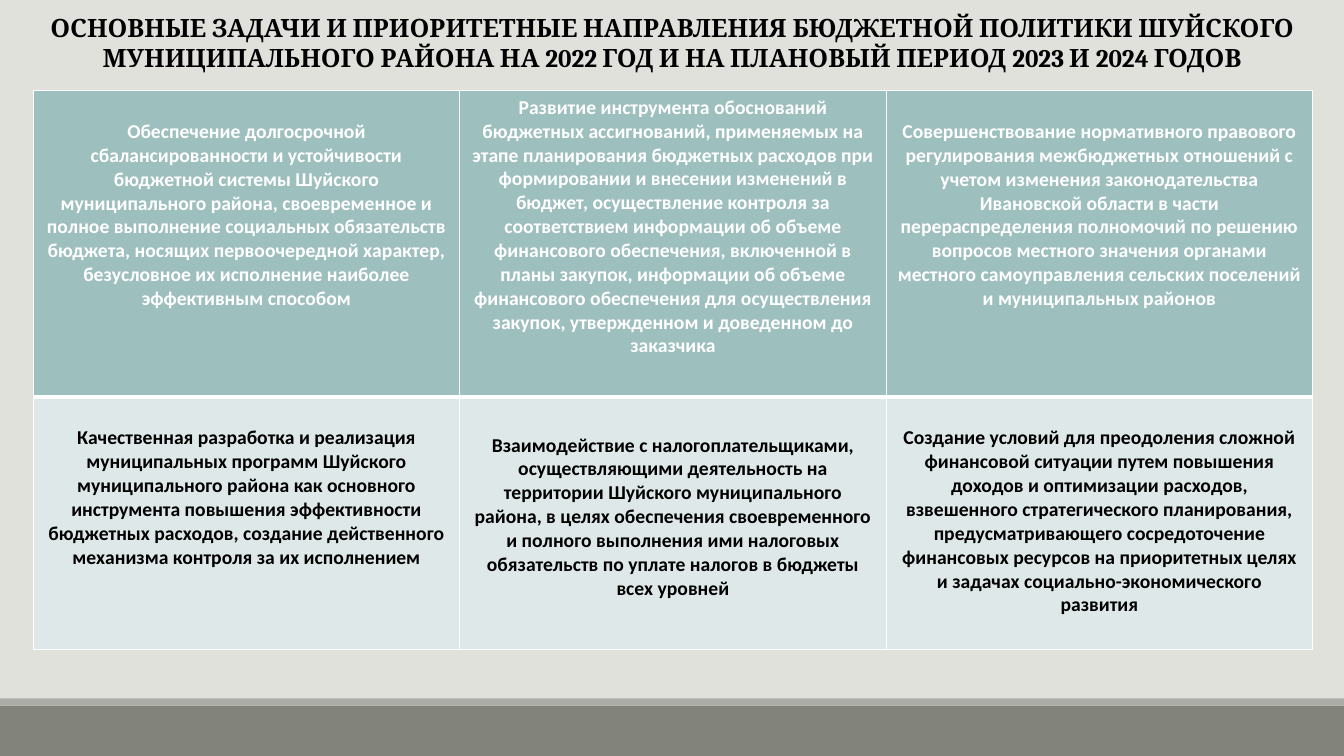
"""Build the slide on the budget policy priorities of the Shuya municipal district."""
from dataclasses import dataclass

from lxml.etree import SubElement
from pptx import Presentation
from pptx.dml.color import RGBColor
from pptx.enum.shapes import MSO_SHAPE
from pptx.enum.text import PP_ALIGN
from pptx.oxml.ns import qn
from pptx.util import Inches, Pt


@dataclass(frozen=True)
class Theme:
    background: str = "E1E1DB"
    footer: str = "82847C"
    footer_edge: str = "ACADA8"
    header_fill: str = "9DBFBE"
    body_fill: str = "DFE8E8"
    white: str = "FFFFFF"
    black: str = "000000"
    title_font: str = "Cambria"
    table_font: str = "Calibri"
    title_size: int = 18
    table_size: int = 14


def style_paragraph(paragraph, font_name, size, color):
    paragraph.alignment = PP_ALIGN.CENTER
    paragraph.font.name = font_name
    paragraph.font.size = Pt(size)
    paragraph.font.bold = True
    paragraph.font.color.rgb = RGBColor.from_string(color)


def add_border(cell, side, color, width):
    properties = cell._tc.get_or_add_tcPr()
    line = SubElement(properties, qn(f"a:{side}"), w=str(Pt(width)))
    fill = SubElement(line, qn("a:solidFill"))
    SubElement(fill, qn("a:srgbClr"), val=color)


theme = Theme()
presentation = Presentation()
presentation.slide_width = Inches(13.33)
presentation.slide_height = Inches(7.5)
slide = presentation.slides.add_slide(presentation.slide_layouts[6])
slide.background.fill.solid()
slide.background.fill.fore_color.rgb = RGBColor.from_string(theme.background)

for top, height, color in ((7, 0.5, theme.footer), (6.93, 0.07, theme.footer_edge)):
    band = slide.shapes.add_shape(
        MSO_SHAPE.RECTANGLE, 0, Inches(top), presentation.slide_width, Inches(height)
    )
    band.shadow.inherit = False
    band.fill.solid()
    band.fill.fore_color.rgb = RGBColor.from_string(color)
    band.line.fill.background()

title = slide.shapes.add_textbox(Inches(0.1), Inches(0.07), Inches(13.14), Inches(0.71))
title.text_frame.word_wrap = True
title.text_frame.text = (
    "ОСНОВНЫЕ ЗАДАЧИ И ПРИОРИТЕТНЫЕ НАПРАВЛЕНИЯ БЮДЖЕТНОЙ ПОЛИТИКИ ШУЙСКОГО "
    "МУНИЦИПАЛЬНОГО РАЙОНА НА 2022 ГОД И НА ПЛАНОВЫЙ ПЕРИОД 2023 И 2024 ГОДОВ"
)
style_paragraph(title.text_frame.paragraphs[0], theme.title_font, theme.title_size, theme.black)

priorities = (
    (
        "Обеспечение долгосрочной сбалансированности и устойчивости бюджетной системы "
        "Шуйского муниципального района, своевременное и полное выполнение социальных "
        "обязательств бюджета, носящих первоочередной характер, безусловное их "
        "исполнение наиболее эффективным способом",
        "Развитие инструмента обоснований бюджетных ассигнований, применяемых на этапе "
        "планирования бюджетных расходов при формировании и внесении изменений в бюджет, "
        "осуществление контроля за соответствием информации об объеме финансового "
        "обеспечения, включенной в планы закупок, информации об объеме финансового "
        "обеспечения для осуществления закупок, утвержденном и доведенном до заказчика",
        "Совершенствование нормативного правового регулирования межбюджетных отношений "
        "с учетом изменения законодательства Ивановской области в части "
        "перераспределения полномочий по решению вопросов местного значения органами "
        "местного самоуправления сельских поселений и муниципальных районов",
    ),
    (
        "Качественная разработка и реализация муниципальных программ Шуйского "
        "муниципального района как основного инструмента повышения эффективности "
        "бюджетных расходов, создание действенного механизма контроля за их исполнением",
        "Взаимодействие с налогоплательщиками, осуществляющими деятельность на "
        "территории Шуйского муниципального района, в целях обеспечения своевременного "
        "и полного выполнения ими налоговых обязательств по уплате налогов в бюджеты "
        "всех уровней",
        "Создание условий для преодоления сложной финансовой ситуации путем повышения "
        "доходов и оптимизации расходов, взвешенного стратегического планирования, "
        "предусматривающего сосредоточение финансовых ресурсов на приоритетных целях и "
        "задачах социально-экономического развития",
    ),
)
row_heights = (3.04, 2.5)
top_margins = ((0.29, 0.05, 0.29), (0.29, 0.36, 0.29))
row_colors = ((theme.header_fill, theme.white), (theme.body_fill, theme.black))
divider_sides = ("lnB", "lnT")

table = slide.shapes.add_table(
    2, 3, Inches(0.33), Inches(0.9), Inches(12.69), Inches(sum(row_heights))
).table
table.horz_banding = False
for column in table.columns:
    column.width = Inches(4.23)

for row_index, texts in enumerate(priorities):
    table.rows[row_index].height = Inches(row_heights[row_index])
    fill_color, text_color = row_colors[row_index]
    for column_index, text in enumerate(texts):
        cell = table.cell(row_index, column_index)
        cell.text = text
        cell.margin_top = Inches(top_margins[row_index][column_index])
        style_paragraph(
            cell.text_frame.paragraphs[0], theme.table_font, theme.table_size, text_color
        )
        for side in ("lnL", "lnR", "lnT", "lnB"):
            add_border(cell, side, theme.white, 3 if side == divider_sides[row_index] else 1)
        cell.fill.solid()
        cell.fill.fore_color.rgb = RGBColor.from_string(fill_color)

presentation.save("out.pptx")
